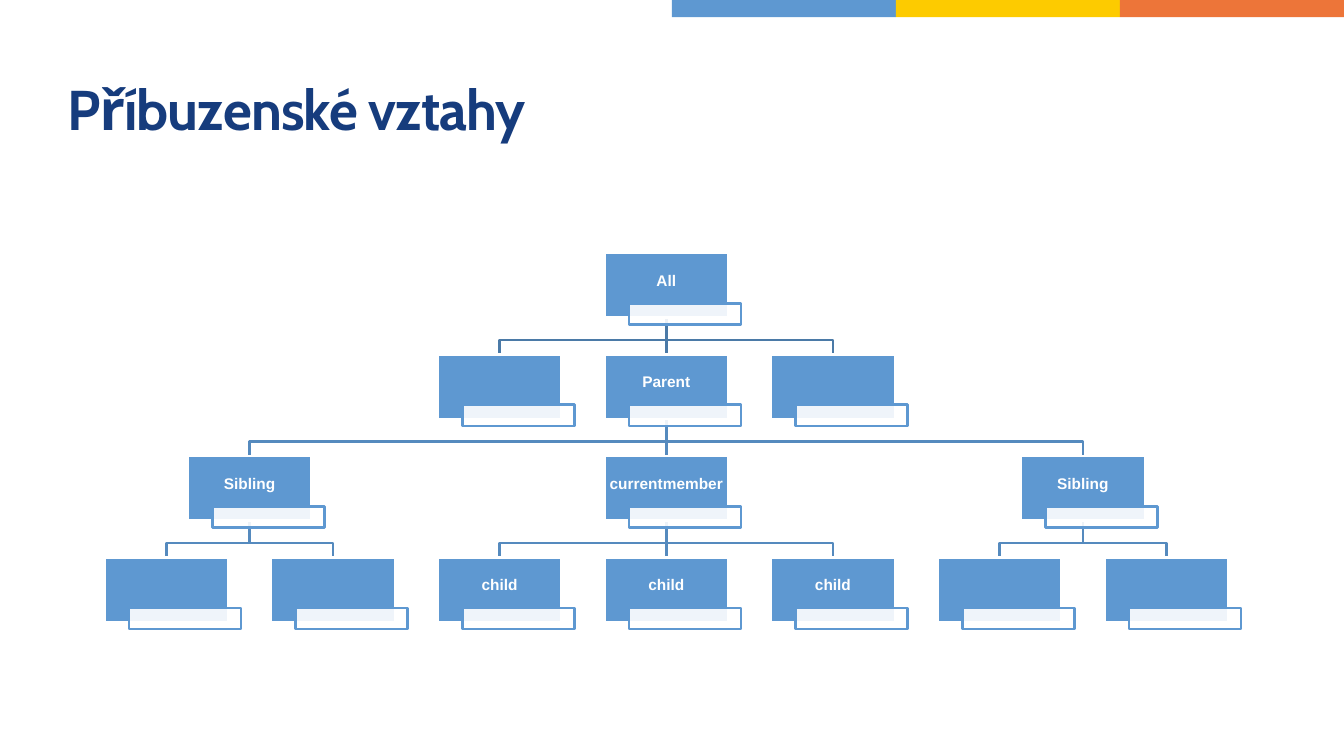
from dataclasses import dataclass

from lxml.etree import SubElement
from pptx import Presentation
from pptx.dml.color import RGBColor
from pptx.enum.shapes import MSO_CONNECTOR, MSO_SHAPE
from pptx.enum.text import MSO_ANCHOR, PP_ALIGN
from pptx.oxml.ns import qn
from pptx.shapes.autoshape import Shape
from pptx.shapes.shapetree import SlideShapes
from pptx.util import Inches, Length, Pt

BLUE = RGBColor(0x5E, 0x98, 0xD1)
YELLOW = RGBColor(0xFD, 0xCB, 0x00)
ORANGE = RGBColor(0xED, 0x75, 0x39)
NAVY = RGBColor(0x16, 0x3C, 0x7D)
WHITE = RGBColor(0xFF, 0xFF, 0xFF)
TOP_LINK = RGBColor(0x4B, 0x7A, 0xA7)
LOWER_LINK = RGBColor(0x55, 0x8A, 0xBE)

SLIDE_WIDTH, SLIDE_HEIGHT = Inches(13.33), Inches(7.5)
FIRST_CENTER, COLUMN = Inches(1.65), Inches(1.653)
FIRST_TOP, ROW = Inches(2.51), Inches(1.007)
BOX_WIDTH, BOX_HEIGHT = Inches(1.23), Inches(0.64)
PLATE_WIDTH, PLATE_HEIGHT = Inches(1.11), Inches(0.21)
PLATE_RIGHT, PLATE_DOWN = Inches(0.245), Inches(0.5)
BEND = 0.61
LINE = Pt(2)


@dataclass(frozen=True)
class Member:
    column: float
    label: str = ""
    children: tuple["Member", ...] = ()


HIERARCHY = Member(3, "All", (
    Member(2),
    Member(3, "Parent", (
        Member(0.5, "Sibling", (Member(0), Member(1))),
        Member(3, "currentmember", tuple(Member(column, "child") for column in (2, 3, 4))),
        Member(5.5, "Sibling", (Member(5), Member(6))),
    )),
    Member(4),
))


def add_rectangle(shapes: SlideShapes, left: float, top: float, width: float,
                  height: float, fill: RGBColor, line: RGBColor | None = None) -> Shape:
    rectangle = shapes.add_shape(MSO_SHAPE.RECTANGLE, Length(left), Length(top),
                                 Length(width), Length(height))
    rectangle.shadow.inherit = False
    rectangle.fill.solid()
    rectangle.fill.fore_color.rgb = fill
    if line is None:
        rectangle.line.fill.background()
    else:
        rectangle.line.color.rgb = line
        rectangle.line.width = LINE
    return rectangle


def add_label(box: Shape, label: str) -> None:
    frame = box.text_frame
    frame.text = label
    frame.word_wrap = True
    frame.vertical_anchor = MSO_ANCHOR.MIDDLE
    frame.margin_left = frame.margin_right = frame.margin_top = Inches(0.01)
    frame.margin_bottom = Inches(0.09)
    paragraph = frame.paragraphs[0]
    paragraph.alignment = PP_ALIGN.CENTER
    paragraph.line_spacing = 0.9
    font = paragraph.runs[0].font
    font.name, font.size, font.bold = "Arial", Pt(11), True
    font.color.rgb = WHITE


def add_link(shapes: SlideShapes, parent: Shape, child: Shape, color: RGBColor) -> None:
    start_x = parent.left + parent.width // 2
    end_x = child.left + child.width // 2
    start_y, end_y = parent.top + parent.height, child.top
    if start_x == end_x:
        link = shapes.add_connector(MSO_CONNECTOR.STRAIGHT, start_x, start_y, end_x, end_y)
        link.begin_connect(parent, 2)
        link.end_connect(child, 0)
        SubElement(link._element.spPr, qn("a:effectLst"))
    else:
        bend_y = start_y + int((end_y - start_y) * BEND)
        outline = shapes.build_freeform(start_x, start_y)
        outline.add_line_segments([(start_x, bend_y), (end_x, bend_y), (end_x, end_y)],
                                  close=False)
        link = outline.convert_to_shape()
        link.fill.background()
        link.shadow.inherit = False
    link.line.color.rgb = color
    link.line.width = LINE
    link._element.getparent().insert(2, link._element)


def add_member(shapes: SlideShapes, member: Member, level: int = 0) -> Shape:
    left = FIRST_CENTER + COLUMN * member.column - BOX_WIDTH / 2
    top = FIRST_TOP + ROW * level
    box = add_rectangle(shapes, left, top, BOX_WIDTH, BOX_HEIGHT, BLUE, WHITE)
    if member.label:
        add_label(box, member.label)
    plate = add_rectangle(shapes, left + PLATE_RIGHT, top + PLATE_DOWN,
                          PLATE_WIDTH, PLATE_HEIGHT, WHITE, BLUE)
    plate_color = plate._element.spPr.find(f"{qn('a:solidFill')}/{qn('a:srgbClr')}")
    SubElement(plate_color, qn("a:alpha"), val="90000")
    for child in member.children:
        child_box = add_member(shapes, child, level + 1)
        add_link(shapes, box, child_box, LOWER_LINK if level else TOP_LINK)
    return box


def add_heading(shapes: SlideShapes) -> None:
    heading = shapes.add_textbox(Length(SLIDE_WIDTH * 0.05), Length(SLIDE_HEIGHT * 0.06),
                                 Length(SLIDE_WIDTH * 0.9), Length(SLIDE_HEIGHT / 6))
    frame = heading.text_frame
    frame.text = "Příbuzenské vztahy"
    frame.word_wrap = True
    frame.vertical_anchor = MSO_ANCHOR.MIDDLE
    frame.margin_left = frame.margin_right = frame.margin_top = frame.margin_bottom = 0
    run = frame.paragraphs[0].runs[0]
    run.font.name, run.font.size, run.font.bold = "Cabin", Pt(40), True
    run.font.color.rgb = NAVY
    run.font._element.set("spc", "-60")


def main() -> None:
    presentation = Presentation()
    presentation.slide_width, presentation.slide_height = SLIDE_WIDTH, SLIDE_HEIGHT
    shapes = presentation.slides.add_slide(presentation.slide_layouts[6]).shapes
    stripe = SLIDE_WIDTH / 6
    for position, color in enumerate((BLUE, YELLOW, ORANGE), start=3):
        add_rectangle(shapes, stripe * position, 0, stripe, Inches(0.17), color)
    add_heading(shapes)
    add_member(shapes, HIERARCHY)
    presentation.save("out.pptx")


if __name__ == "__main__":
    main()
